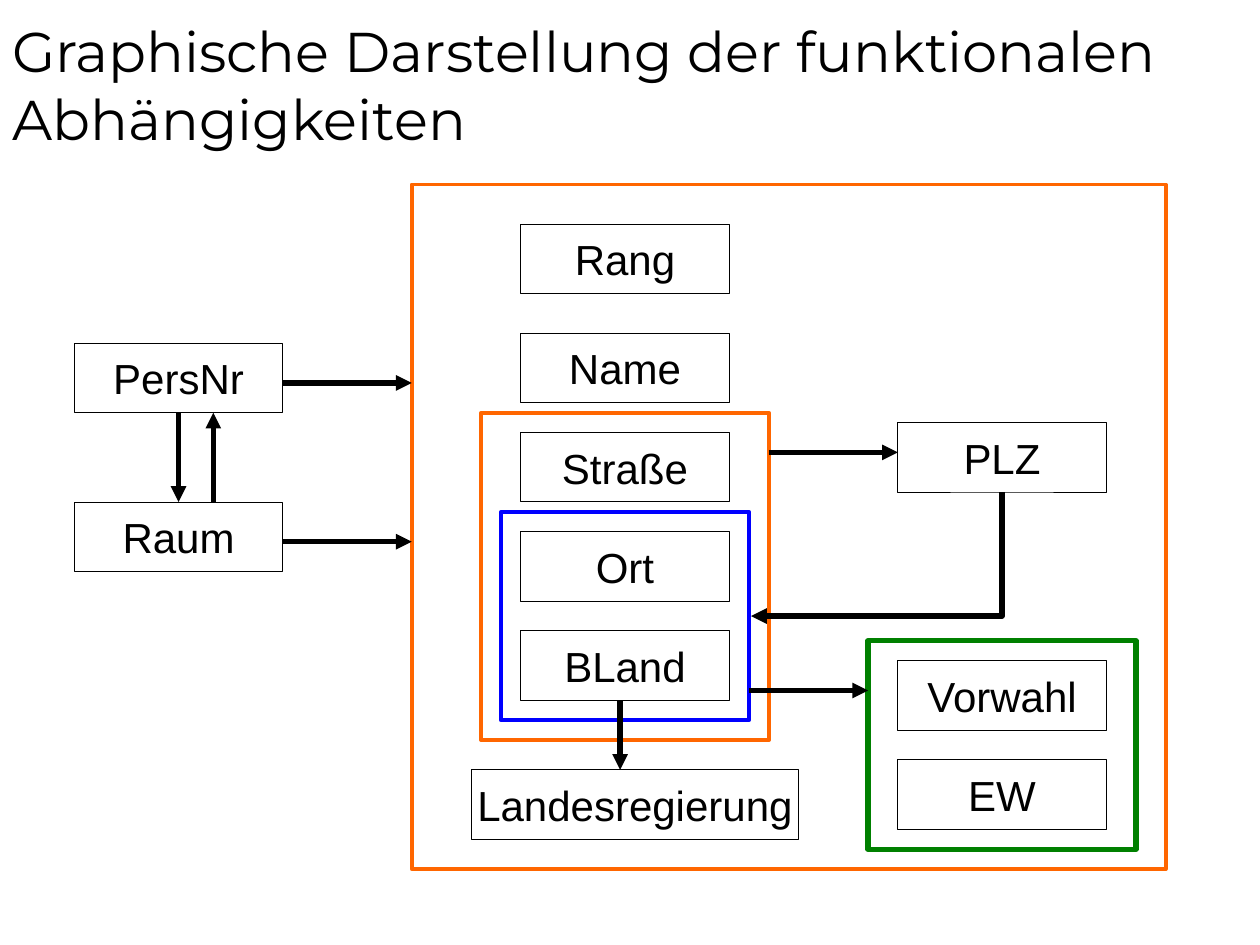
from lxml.etree import SubElement
from pptx import Presentation
from pptx.dml.color import RGBColor
from pptx.enum.shapes import MSO_CONNECTOR as Link, MSO_SHAPE as Shape
from pptx.enum.text import MSO_ANCHOR as Anchor, PP_ALIGN as Align
from pptx.oxml.ns import qn
from pptx.util import Cm, Inches, Pt


def color(code):
    return RGBColor.from_string(code)


class Diagram:
    """Holds the style and the slide; lengths are columns and rows of a 2 mm grid."""
    CELL, LEFT, TOP = Cm(0.2), Cm(0.1), Cm(0.12)
    BOX_WIDTH, BOX_HEIGHT = 21, 7
    INK, TITLE_FONT, BOX_FONT = "000000", "Montserrat", "Arial"

    def __init__(self, deck):
        self.deck = deck
        self.slide = deck.slides.add_slide(deck.slide_layouts[6])

    def point(self, column, row):
        return (int(self.LEFT + column * self.CELL),
                int(self.TOP + row * self.CELL))

    def add_text(self, frame, text, font, size):
        para = frame.paragraphs[0]
        span = para.add_run()
        span.text = text
        span.font.name = font
        span.font.size = Pt(size)
        span.font.color.rgb = color(self.INK)
        return para

    def title(self, text):
        box = self.slide.shapes.add_textbox(
            0, 0, self.deck.slide_width, int(self.deck.slide_height / 6))
        frame = box.text_frame
        frame.word_wrap = True
        frame.vertical_anchor = Anchor.BOTTOM
        self.add_text(frame, text, self.TITLE_FONT, 32)

    def frame(self, column, row, width, height, line, weight=2.25):
        rect = self.slide.shapes.add_shape(
            Shape.RECTANGLE, *self.point(column, row),
            int(width * self.CELL), int(height * self.CELL))
        rect.shadow.inherit = False
        rect.fill.background()
        rect.line.color.rgb = color(line)
        rect.line.width = Pt(weight)
        return rect

    def box(self, text, column, row, width=BOX_WIDTH):
        rect = self.frame(column, row, width, self.BOX_HEIGHT, self.INK, 0.5)
        rect.text_frame.word_wrap = False
        rect.text_frame.vertical_anchor = Anchor.MIDDLE
        para = self.add_text(rect.text_frame, text, self.BOX_FONT, 24)
        para.alignment = Align.CENTER
        return rect

    def arrow(self, start, end, kind=Link.STRAIGHT):
        link = self.slide.shapes.add_connector(
            kind, *self.point(*start), *self.point(*end))
        link.line.color.rgb = color(self.INK)
        link.line.width = Pt(3)
        properties = link._element.spPr
        SubElement(properties.find(qn("a:ln")), qn("a:tailEnd"), type="triangle")
        SubElement(properties, qn("a:effectLst"))
        return link

    def corner_arrow(self, source, start, end):
        """Runs down from the bottom of source, then left to the end."""
        link = self.arrow(start, end, Link.ELBOW)
        link.begin_connect(source, 2)
        # One-corner connector, turned a quarter about its own centre
        properties = link._element.spPr
        properties.find(qn("a:prstGeom")).set("prst", "bentConnector2")
        properties.xfrm.flipH = False
        properties.xfrm.set("rot", str(90 * 60000))
        width, height = link.width, link.height
        link.left += (width - height) // 2
        link.top += (height - width) // 2
        link.width, link.height = height, width


def main():
    deck = Presentation()
    deck.slide_width, deck.slide_height = Inches(10), Inches(7.5)
    diagram = Diagram(deck)
    diagram.title("Graphische Darstellung der funktionalen Abhängigkeiten")

    # Attributes: name, column, row
    attributes = [
        ("Rang", 52, 22), ("Name", 52, 33), ("Straße", 52, 43),
        ("Ort", 52, 53), ("BLand", 52, 63),
        ("PersNr", 7, 34), ("Raum", 7, 50),
        ("PLZ", 90, 42), ("Vorwahl", 90, 66), ("EW", 90, 76),
    ]
    boxes = {name: diagram.box(name, column, row)
             for name, column, row in attributes}
    diagram.box("Landesregierung", 47, 77, width=33)

    # Frames around groups of attributes
    diagram.frame(48, 41, 29, 33, "FF6600")
    diagram.frame(41, 18, 76, 69, "FF6600")
    diagram.frame(50, 51, 25, 21, "0000FF")
    diagram.frame(87, 64, 27, 21, "008000", 3)

    # Dependencies
    key_arrow = diagram.arrow((17.5, 41), (17.5, 50))
    key_arrow.begin_connect(boxes["PersNr"], 2)
    key_arrow.end_connect(boxes["Raum"], 0)
    for start, end in [
        ((21, 50), (21, 41)),    # Raum to PersNr
        ((28, 38), (41, 38)),    # PersNr to all attributes
        ((28, 54), (41, 54)),    # Raum to all attributes
        ((62, 70), (62, 77)),    # BLand to Landesregierung
        ((75, 69), (87, 69)),    # Ort, BLand to Vorwahl, EW
        ((77, 45), (90, 45)),    # Straße, Ort, BLand to PLZ
    ]:
        diagram.arrow(start, end)
    diagram.corner_arrow(boxes["PLZ"], (100.5, 49), (75.2, 61.5))

    deck.save("out.pptx")


if __name__ == "__main__":
    main()
